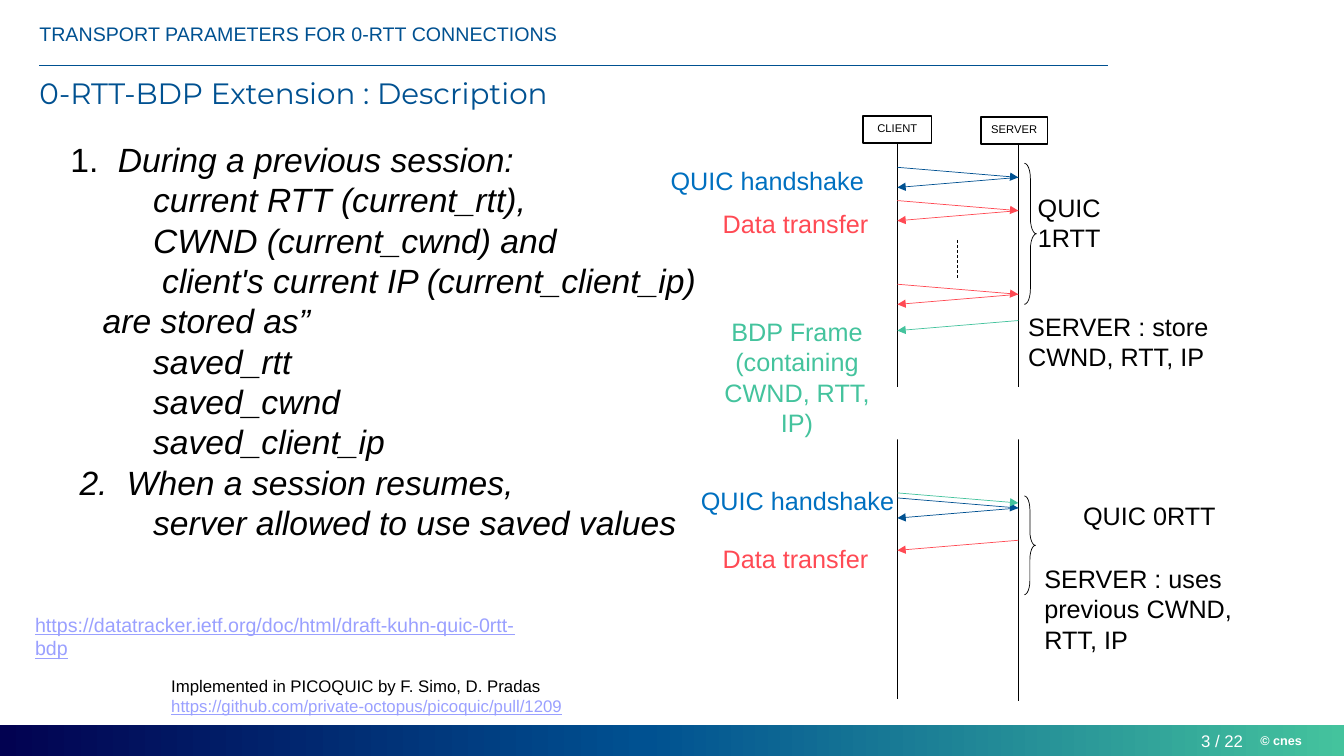
from dataclasses import dataclass
from lxml.etree import SubElement as Sub
from pptx import Presentation
from pptx.dml.color import RGBColor as Rgb
from pptx.enum.dml import MSO_LINE as Dash
from pptx.enum.shapes import MSO_CONNECTOR as Conn, MSO_SHAPE as Form
from pptx.enum.text import MSO_ANCHOR as Anchor, PP_ALIGN as Align
from pptx.oxml.ns import qn
from pptx.util import Inches, Pt


@dataclass(frozen=True)
class Theme:
    font: str = "Arial"
    title: str = "Montserrat"
    black: str = "000000"
    white: str = "FFFFFF"
    deep: str = "020251"
    navy: str = "005191"
    blue: str = "0070C0"
    red: str = "FF4A54"
    green: str = "44C39D"
    link: str = "9AA0FF"
    tiny: int = 8
    mark: int = 9
    note: int = 12
    head: int = 14
    label: int = 18
    large: int = 21
    body: int = 24


class Deck:
    def __init__(self, theme):
        self.theme = theme
        self.prs = Presentation()
        self.prs.slide_width = Inches(13.33)
        self.prs.slide_height = Inches(7.5)
        self.slide = self.prs.slides.add_slide(self.prs.slide_layouts[6])

    def style(self, run, size, color, bold=False, italic=False, line=False, face=None):
        font = run.font
        font.name = face or self.theme.font
        font.size = Pt(size)
        font.color.rgb = Rgb.from_string(color)
        font.bold, font.italic, font.underline = bold, italic, line

    def label(self, frame, lines, size, color, align=Align.LEFT, **kind):
        frame.text = "\n".join(lines)
        for para in frame.paragraphs:
            para.alignment = align
            for run in para.runs:
                self.style(run, size, color, **kind)

    def text(self, at, lines, size, color, align=Align.LEFT, wrap=True,
             pad=True, mid=False, **kind):
        frame = self.slide.shapes.add_textbox(*map(Inches, at)).text_frame
        frame.word_wrap = wrap
        frame.vertical_anchor = Anchor.MIDDLE if mid else Anchor.TOP
        if not pad:
            frame.margin_left = frame.margin_right = 0
            frame.margin_top = frame.margin_bottom = 0
        self.label(frame, lines, size, color, align, **kind)
        return frame

    def shape(self, form, at, fill=None, edge=None, width=1):
        item = self.slide.shapes.add_shape(form, *map(Inches, at))
        item.shadow.inherit = False
        if fill:
            item.fill.solid()
            item.fill.fore_color.rgb = Rgb.from_string(fill)
        else:
            item.fill.background()
        if edge:
            item.line.color.rgb = Rgb.from_string(edge)
            item.line.width = Pt(width)
        else:
            item.line.fill.background()
        return item

    def band(self, at, stops):
        item = self.shape(Form.RECTANGLE, at)
        item.fill.gradient()
        item.fill.gradient_angle = 0
        group = next(item.element.iter(qn("a:gsLst")))
        group.clear()
        for place, color in stops:
            stop = Sub(group, qn("a:gs"), pos=str(place * 1000))
            Sub(stop, qn("a:srgbClr"), val=color)

    def actor(self, at, name):
        t = self.theme
        item = self.shape(Form.RECTANGLE, at, edge=t.black)
        item.text_frame.vertical_anchor = Anchor.TOP
        self.label(item.text_frame, [name], t.tiny, t.black, Align.CENTER)
        return item

    def brace(self, at):
        item = self.shape(Form.RIGHT_BRACE, at, edge=self.theme.black, width=0.5)
        item.adjustments[0] = 1.28

    def line(self, start, end, color, width=0.5, arrow=False, dash=False):
        item = self.slide.shapes.add_connector(
            Conn.STRAIGHT, *map(Inches, (*start, *end)))
        item.line.color.rgb = Rgb.from_string(color)
        item.line.width = Pt(width)
        if dash:
            item.line.dash_style = Dash.DASH
        if arrow:
            Sub(item.get_or_add_ln(), qn("a:tailEnd"), type="triangle")
        Sub(item.element.spPr, qn("a:effectLst"))
        return item

    def send(self, top, color):
        self.line((8.9, top), (10.1, top + 0.1), color, arrow=True)

    def reply(self, top, color):
        self.line((10.1, top), (8.9, top + 0.1), color, arrow=True)

    def trip(self, top, color):
        self.send(top, color)
        self.reply(top + 0.1, color)

    def steps(self, at, rows):
        t = self.theme
        frame = self.text(at, [row[-1] for row in rows], t.body, t.black, italic=True)
        for para, (left, hang, _) in zip(frame.paragraphs, rows):
            props = para._p.get_or_add_pPr()
            props.set("marL", str(Inches(left)))
            props.set("indent", str(Inches(-hang)))
        first = frame.paragraphs[0]
        number, rest = first.text.split("\t")
        first.text = number + "\t"
        first.add_run().text = rest
        for run, slant in zip(first.runs, (False, True)):
            self.style(run, t.body, t.black, italic=slant)


def main():
    t = Theme()
    d = Deck(t)
    d.band((0, 7.19, 13.33, 0.31), [(0, t.deep), (48, t.navy), (100, t.green)])
    d.line((0.39, 0.65), (10.99, 0.65), t.navy, 1)
    d.text((12.5, 7.27, 0.42, 0.15), ["© cnes"], t.mark, t.white,
           wrap=False, pad=False, mid=True, bold=True)
    d.text((0.39, 0.18, 9.41, 0.3), ["TRANSPORT PARAMETERS FOR 0-RTT CONNECTIONS"],
           t.head, t.navy, pad=False, mid=True)
    d.text((11.91, 7.25, 0.42, 0.2), ["3 / 22"], t.note, t.white, Align.RIGHT,
           wrap=False, pad=False, mid=True)
    title = d.text((0.39, 0.78, 12.55, 0.32), ["0-RTT-BDP Extension : Description"],
                   t.large, t.navy, pad=False, face=t.title)
    title.paragraphs[0].line_spacing = 0.9

    d.steps((0.42, 1.33, 7.38, 4.14), [
        (0.65, 0.47, "1.\tDuring a previous session:"),
        (1, 0, "current RTT (current_rtt),"),
        (1, 0, "CWND (current_cwnd) and"),
        (1.09, 0, "client's current IP (current_client_ip)"),
        (0.5, 0, "are stored as”"),
        (1, 0, "saved_rtt"),
        (1, 0, "saved_cwnd"),
        (1, 0, "saved_client_ip"),
        (0.74, 0.47, "2.\tWhen a session resumes,"),
        (1, 0, "server allowed to use saved values")])
    d.text((0.25, 6.03, 5.2, 0.58),
           ["https://datatracker.ietf.org/doc/html/draft-kuhn-quic-0rtt-bdp"],
           t.head, t.link, line=True)
    note = d.text((1.6, 6.65, 4.37, 0.5),
                  ["Implemented in PICOQUIC by F. Simo, D. Pradas",
                   "https://github.com/private-octopus/picoquic/pull/1209"],
                  t.note, t.black)
    d.style(note.paragraphs[1].runs[0], t.note, t.link, line=True)

    client = d.actor((8.56, 1.15, 0.68, 0.27), "CLIENT")
    d.actor((9.73, 1.16, 0.66, 0.27), "SERVER")
    life = d.line((8.9, 1.42), (8.9, 6.93), t.black)
    life.begin_connect(client, 2)
    d.line((10.1, 1.44), (10.1, 6.95), t.black)
    d.shape(Form.RECTANGLE, (8.3, 3.84, 2.57, 0.52), t.white)

    for top, color in ((1.66, t.navy), (1.99, t.red), (2.82, t.red), (4.94, t.navy)):
        d.trip(top, color)
    d.line((9.5, 2.38), (9.5, 2.77), t.black, dash=True)
    d.send(4.89, t.green)
    d.reply(3.18, t.green)
    d.reply(5.36, t.red)
    d.brace((10.16, 1.62, 0.12, 1.4))
    d.brace((10.16, 4.92, 0.11, 0.98))

    for at, lines, color, wrap in (
            ((6.54, 1.59, 2.14, 0.4), ["QUIC handshake"], t.blue, False),
            ((7.06, 2.02, 1.66, 0.4), ["Data transfer"], t.red, False),
            ((6.84, 4.77, 2.14, 0.4), ["QUIC handshake"], t.blue, False),
            ((7.06, 5.34, 1.66, 0.4), ["Data transfer"], t.red, False),
            ((6.92, 3.09, 1.97, 1.31), ["BDP Frame (containing CWND, RTT, IP)"],
             t.green, True),
            ((10.19, 1.86, 0.83, 0.71), ["QUIC", "1RTT"], t.black, False),
            ((10.26, 4.91, 2.28, 0.4), ["QUIC 0RTT"], t.black, True)):
        d.text(at, lines, t.label, color, Align.CENTER, wrap)
    for at, line in (
            ((10.1, 3.04, 2.64, 0.71), "SERVER : store CWND, RTT, IP"),
            ((10.26, 5.54, 2.64, 1.01), "SERVER : uses previous CWND, RTT, IP")):
        d.text(at, [line], t.label, t.black)
    d.prs.save("out.pptx")


if __name__ == "__main__":
    main()
